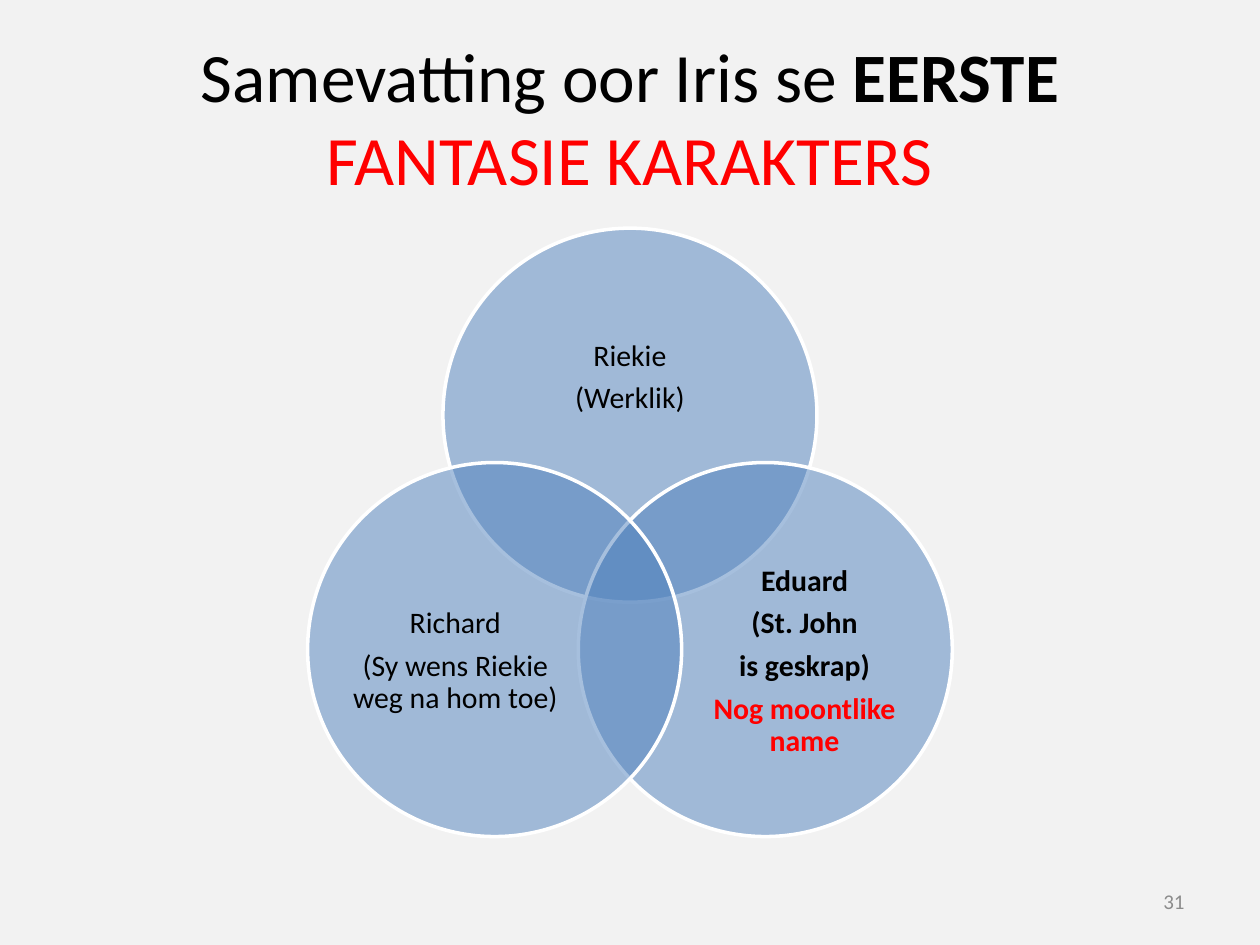
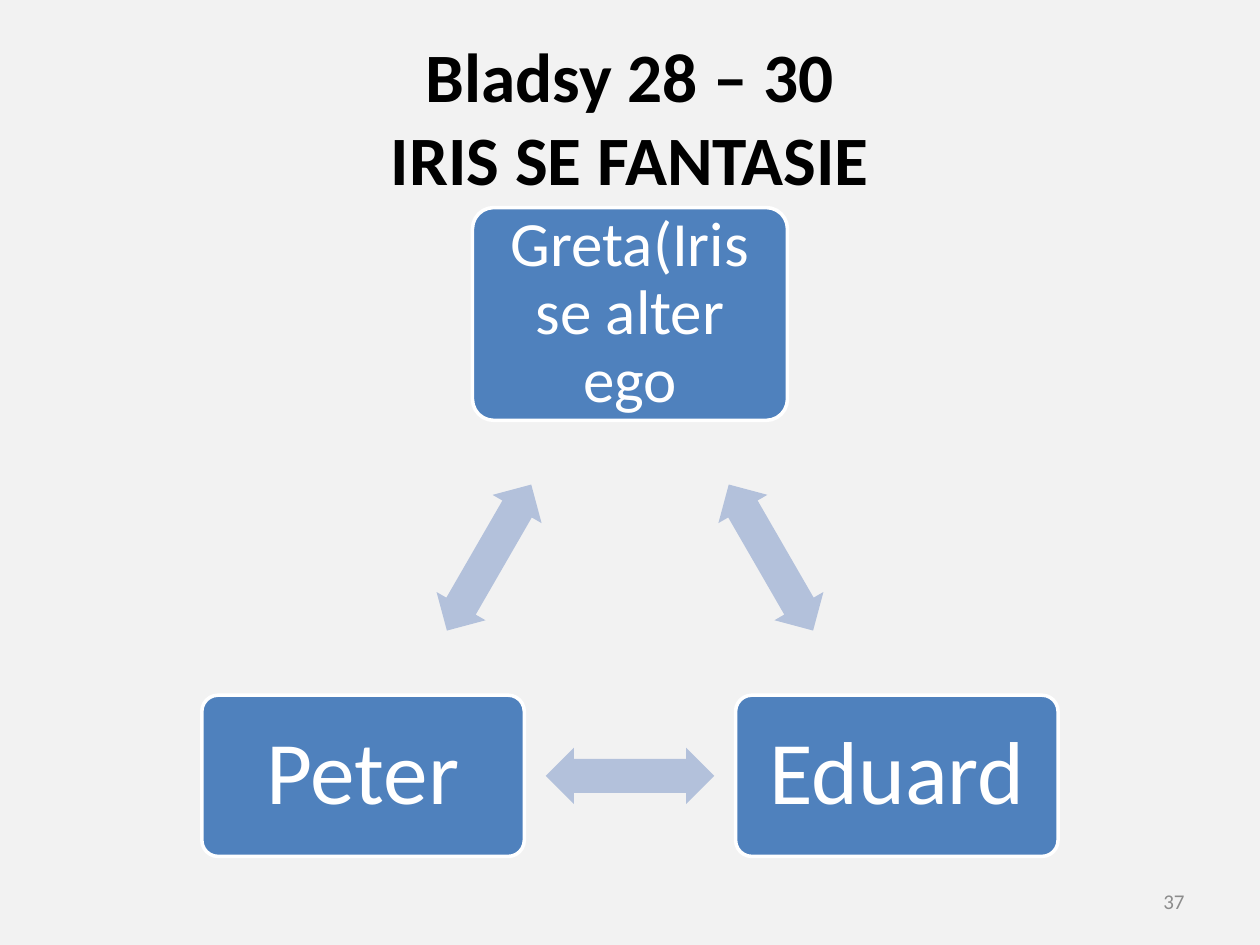
from dataclasses import dataclass
from math import cos, radians, sin

from lxml import etree
from pptx import Presentation
from pptx.dml.color import RGBColor
from pptx.enum.shapes import MSO_SHAPE
from pptx.enum.text import MSO_ANCHOR, PP_ALIGN
from pptx.oxml.ns import qn
from pptx.util import Cm, Pt

OVAL = MSO_SHAPE.OVAL
ROUND = MSO_SHAPE.ROUNDED_RECTANGLE
ARROW = MSO_SHAPE.LEFT_RIGHT_ARROW
MIDDLE = MSO_ANCHOR.MIDDLE
CENTER, RIGHT = PP_ALIGN.CENTER, PP_ALIGN.RIGHT


@dataclass(frozen=True)
class Theme:
    font: str = "Calibri"
    back: str = "F2F2F2"
    blue: str = "4F81BD"
    pale: str = "B3C1DB"
    ink: str = "000000"
    red: str = "FF0000"
    white: str = "FFFFFF"
    gray: str = "8C8C8C"
    title: float = 39.6
    label: int = 17
    long: int = 36
    short: int = 51
    page: int = 12


theme = Theme()


def write(shape, lines, size, color, align=CENTER, inset=None, gap=0, ratio=None):
    frame = shape.text_frame
    looks = {"word_wrap": True, "vertical_anchor": MIDDLE}
    if inset is not None:
        for side in ("left", "top", "right", "bottom"):
            looks[f"margin_{side}"] = Cm(inset)
    for name, value in looks.items():
        setattr(frame, name, value)
    for i, runs in enumerate(lines):
        para = frame.add_paragraph() if i else frame.paragraphs[0]
        form = {"alignment": align, "space_after": Pt(gap * size), "line_spacing": ratio}
        for name, value in form.items():
            setattr(para, name, value)
        for text, bold, tint in runs:
            for j, part in enumerate(text.split("\n")):
                if j:
                    para.add_line_break()
                run = para.add_run()
                run.text = part
                style = {"name": theme.font, "size": Pt(size), "bold": bold}
                for name, value in style.items():
                    setattr(run.font, name, value)
                run.font.color.rgb = RGBColor.from_string(tint or color)


def draw(slide, kind, x, y, wide, high, fill=None, edge=None):
    area = [Cm(v) for v in (x - wide / 2, y - high / 2, wide, high)]
    if kind is None:
        return slide.shapes.add_textbox(*area)
    shape = slide.shapes.add_shape(kind, *area)
    shape.shadow.inherit = False
    shape.fill.solid()
    shape.fill.fore_color.rgb = RGBColor.from_string(fill)
    if edge:
        shape.line.color.rgb = RGBColor.from_string(edge)
        shape.line.width = Pt(2)
    else:
        shape.line.fill.background()
    return shape


deck = Presentation()
deck.slide_width, deck.slide_height = Cm(25.4), Cm(19.05)
mid = 12.7

heads = [
    ([("Samevatting oor Iris se ", False, None), ("EERSTE ", True, None),
      ("FANTASIE KARAKTERS", False, theme.red)], "31"),
    ([("Bladsy 28 – 30\nIRIS SE FANTASIE", True, None)], "37"),
]
pages = []
for title, number in heads:
    slide = deck.slides.add_slide(deck.slide_layouts[6])
    slide.background.fill.solid()
    slide.background.fill.fore_color.rgb = RGBColor.from_string(theme.back)
    write(draw(slide, None, mid, 2.35, 22.86, 3.18), [title], theme.title, theme.ink)
    pages.append((slide, number))

venn, cycle = (slide for slide, number in pages)

rings = [
    (-90, (mid, 7.62, 5.54, 3.4),
     [("Riekie", False, None), ("(Werklik)", False, None)]),
    (30, (16.22, 13.34, 4.52, 4.14),
     [("Eduard", True, None), ("(St. John", True, None),
      ("is geskrap)", True, None), ("Nog moontlike name", True, theme.red)]),
    (150, (9.18, 13.34, 4.52, 4.14),
     [("Richard", False, None), ("(Sy wens Riekie weg na hom toe)", False, None)]),
]
reach, width = 3.15, 7.54
for angle, area, lines in rings:
    turn = radians(angle)
    ring = draw(venn, OVAL, mid + reach * cos(turn), 11.52 + reach * sin(turn),
                width, width, theme.blue, theme.white)
    tone = ring.fill._xPr.find(qn("a:solidFill"))[0]
    etree.SubElement(tone, qn("a:alpha")).set("val", "50000")
    write(draw(venn, None, *area), [[line] for line in lines],
          theme.label, theme.ink, inset=0, gap=0.35, ratio=0.9)

cards = [
    ("Greta(Iris se alter ego", theme.long, (mid, 6.33, 6.35, 4.29), (15.54, 11.24)),
    ("Eduard", theme.short, (18.08, 15.64, 6.5, 3.25), (mid, 15.64)),
    ("Peter", theme.short, (7.32, 15.64, 6.5, 3.25), (9.86, 11.24)),
]
for i, (name, size, area, spot) in enumerate(cards):
    card = draw(cycle, ROUND, *area, theme.blue, theme.white)
    card.adjustments[0] = 0.1
    write(card, [[(name, False, None)]], size, theme.white,
          inset=0.3, gap=0.35, ratio=0.9)
    arrow = draw(cycle, ARROW, *spot, 3.4, 1.14, theme.pale)
    arrow.rotation = 60 + 120 * i
    arrow.adjustments[0], arrow.adjustments[1] = 0.6, 0.5

for slide, number in pages:
    write(draw(slide, None, 21.17, 18.16, 5.92, 1.02),
          [[(number, False, None)]], theme.page, theme.gray, RIGHT)

deck.save("out.pptx")
